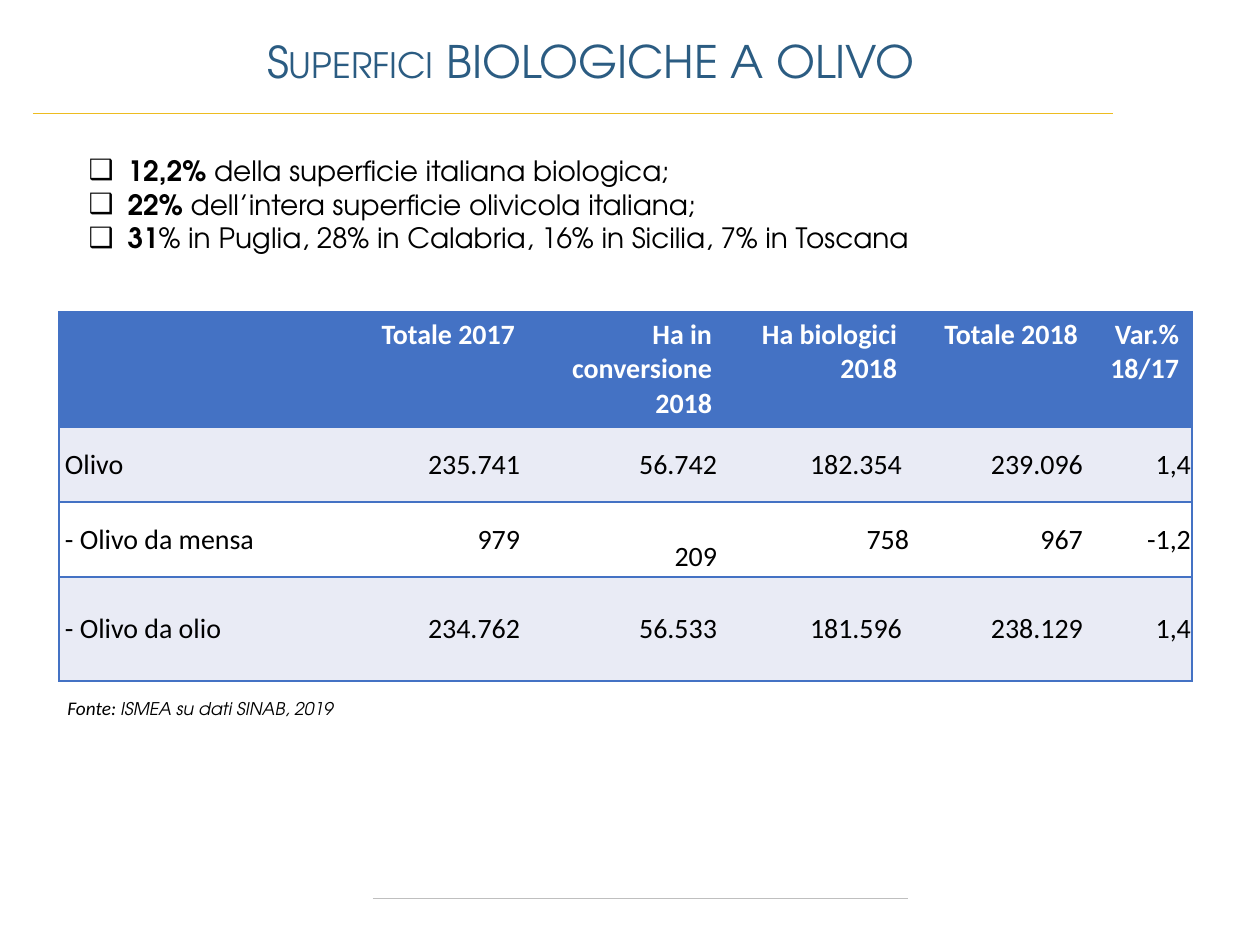
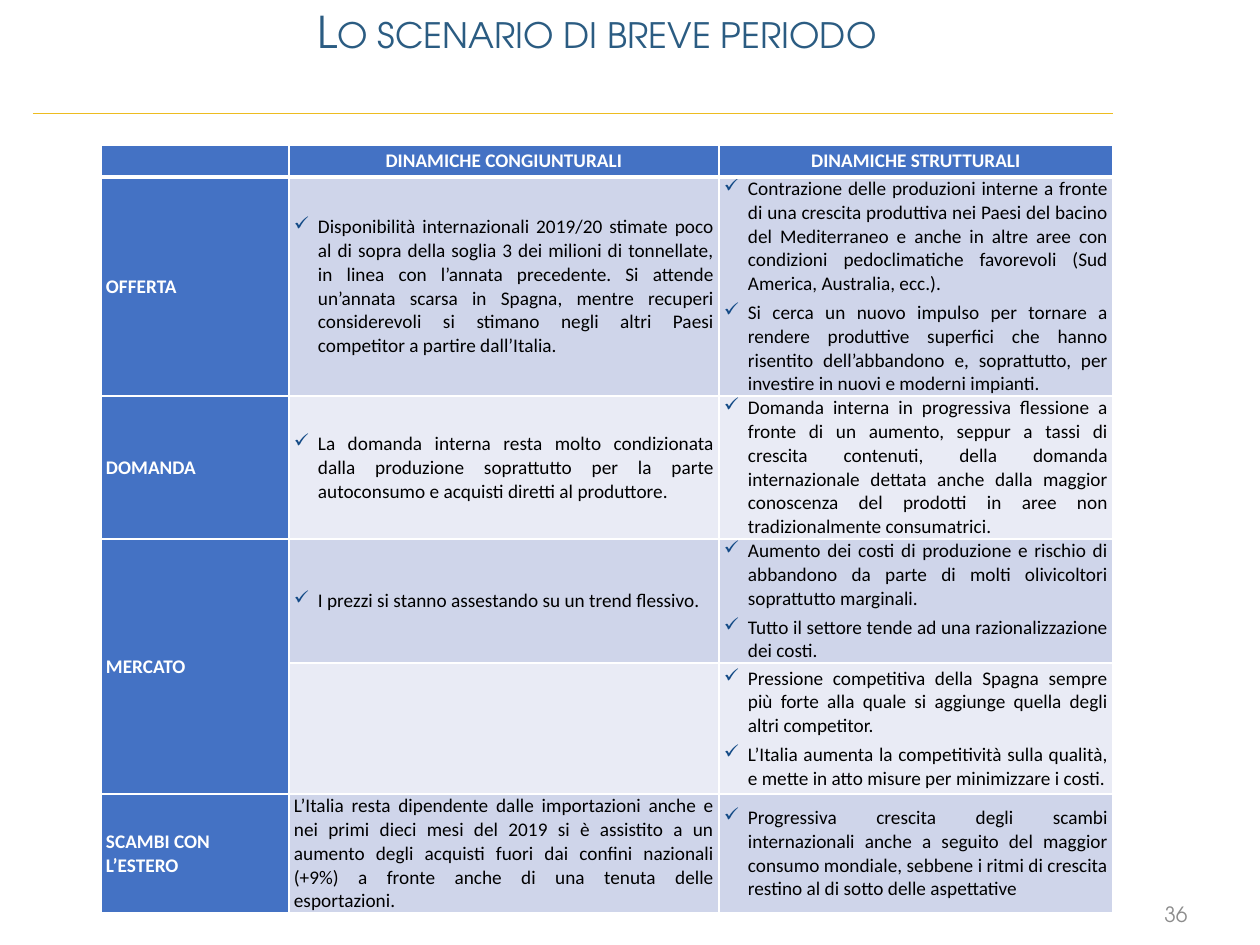
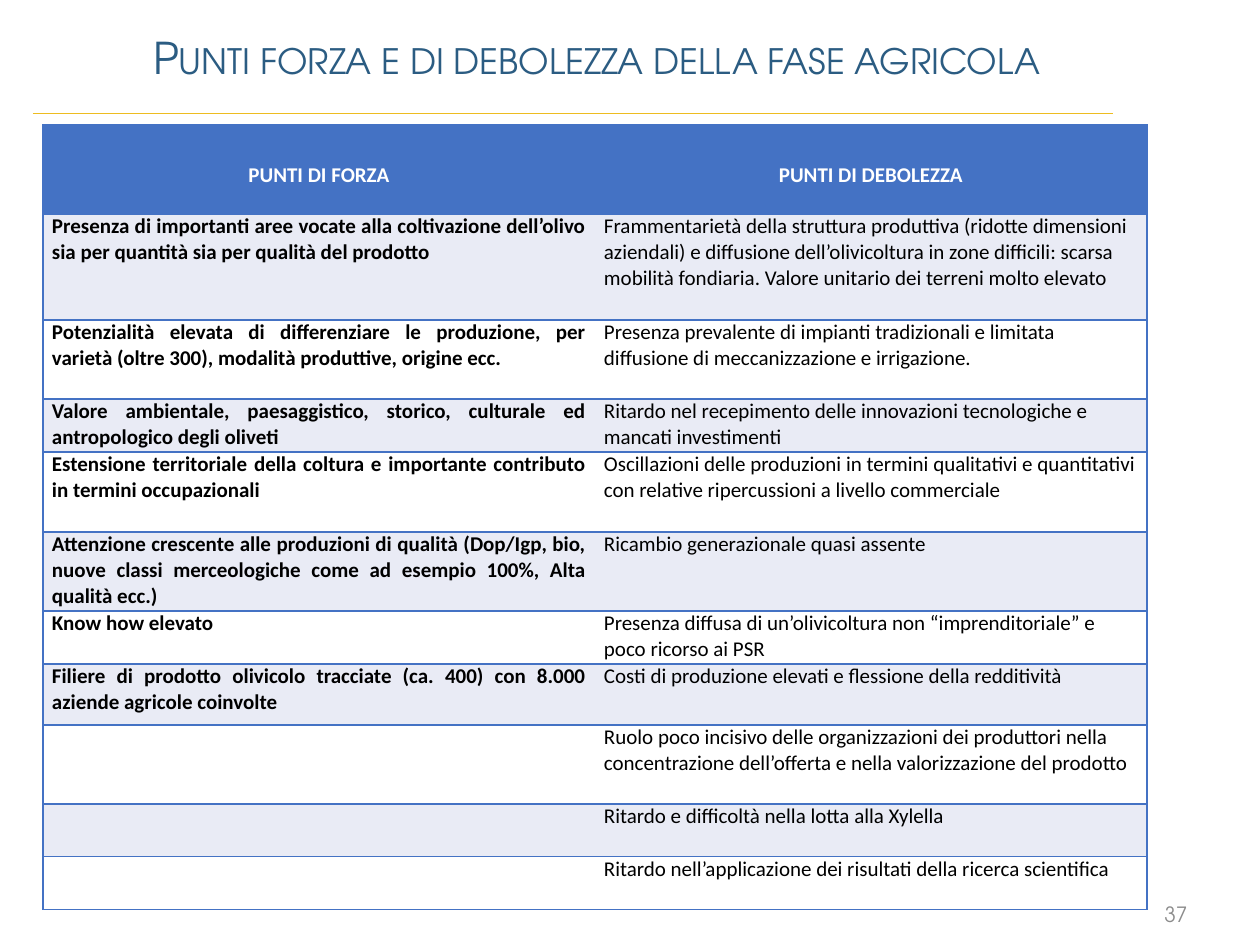
from dataclasses import dataclass, replace

from lxml.etree import SubElement
from pptx import Presentation
from pptx.dml.color import RGBColor
from pptx.enum.shapes import MSO_CONNECTOR
from pptx.enum.text import MSO_ANCHOR, MSO_AUTO_SIZE, PP_ALIGN
from pptx.oxml.ns import qn
from pptx.util import Emu, Pt


@dataclass(frozen=True)
class Theme:
    heading_font: str = "TeX Gyre Adventor"
    table_font: str = "Calibri"
    title: str = "2B5C82"
    rule: str = "EDBC20"
    footer_rule: str = "BFBFBF"
    page: str = "8C8C8C"
    text: str = "000000"
    white: str = "FFFFFF"
    blue: str = "4472C4"
    band: str = "CFD5EA"
    pale: str = "E9EBF5"
    check: str = "134A86"
    title_size: int = 25
    large_title_size: int = 32
    large_size: int = 16
    medium_size: int = 12
    small_size: int = 11
    note_size: int = 10


THEME = Theme()


@dataclass(frozen=True)
class Type:
    size: int
    color: str = THEME.text
    font: str = THEME.table_font
    bold: bool = False
    italic: bool = False
    small_caps: bool = False


@dataclass(frozen=True)
class Bullet:
    symbol: str
    indent: int
    color: str = ""


@dataclass(frozen=True)
class CellStyle:
    type: Type
    fill: str
    margins: tuple = (5, 0, 5, 0)
    align: PP_ALIGN = PP_ALIGN.LEFT
    anchor: MSO_ANCHOR = MSO_ANCHOR.MIDDLE
    bullet: Bullet = None


def px(value):
    return Emu(round(value * 914400 / 126))


class Deck:
    PLAIN_TABLE = "{2D5ABB26-0587-4C30-8999-92F81FD0307C}"

    def __init__(self, theme):
        self.theme = theme
        self.presentation = Presentation()
        self.presentation.slide_width = px(1260)
        self.presentation.slide_height = px(945)
        title_style = self.presentation.slide_master.element.find(
            ".//" + qn("p:titleStyle")
        )
        title_style.find(".//" + qn("a:defRPr")).set("sz", str(theme.title_size * 100))
        self.title_type = Type(
            theme.title_size, theme.title, theme.heading_font, small_caps=True
        )
        self.slide = None

    def start_slide(self, runs, layout=5, line_break=False):
        self.slide = self.presentation.slides.add_slide(
            self.presentation.slide_layouts[layout]
        )
        self.line(373, 908, 898, self.theme.footer_rule, 0.25)
        self.line(33, 1113, 113, self.theme.rule, 0.5)
        title = self.slide.shapes.title
        self.place(title, 49, 26, 1096, 69)
        paragraph = title.text_frame.paragraphs[0]
        paragraph.alignment = PP_ALIGN.CENTER
        paragraph.line_spacing = 0.9
        self.add_runs(paragraph, runs)
        if line_break:
            paragraph.add_line_break()

    def place(self, shape, left, top, width, height):
        shape.left, shape.top = px(left), px(top)
        shape.width, shape.height = px(width), px(height)
        frame = shape.text_frame
        frame.auto_size = MSO_AUTO_SIZE.NONE
        frame.word_wrap = True
        frame.vertical_anchor = MSO_ANCHOR.MIDDLE

    def line(self, left, right, top, color, weight):
        connector = self.slide.shapes.add_connector(
            MSO_CONNECTOR.STRAIGHT, px(left), px(top), px(right), px(top)
        )
        connector.line.color.rgb = RGBColor.from_string(color)
        connector.line.width = Pt(weight)
        SubElement(connector._element.spPr, qn("a:effectLst"))

    def add_runs(self, paragraph, runs):
        for text, style in runs:
            run = paragraph.add_run()
            run.text = text
            font = run.font
            font.name = style.font
            font.size = Pt(style.size)
            font.bold = style.bold
            font.italic = style.italic
            font.color.rgb = RGBColor.from_string(style.color)
            if style.small_caps:
                run._r.get_or_add_rPr().set("cap", "small")

    def add_bullet(self, paragraph, bullet):
        properties = paragraph._p.get_or_add_pPr()
        properties.set("marL", str(px(bullet.indent)))
        properties.set("indent", str(-px(bullet.indent)))
        if bullet.color:
            color = SubElement(properties, qn("a:buClr"))
            SubElement(color, qn("a:srgbClr"), val=bullet.color)
        SubElement(properties, qn("a:buChar"), char=bullet.symbol)

    def bullet_list(self, items, bullet, left, top, width, height):
        body = self.slide.placeholders[1]
        self.place(body, left, top, width, height)
        frame = body.text_frame
        for index, runs in enumerate(items):
            paragraph = frame.add_paragraph() if index else frame.paragraphs[0]
            self.add_bullet(paragraph, bullet)
            paragraph.space_before = Pt(0)
            paragraph.line_spacing = 1.0
            self.add_runs(paragraph, runs)

    def text_box(self, runs, left, top, width, height, align=PP_ALIGN.LEFT, wrap=True):
        box = self.slide.shapes.add_textbox(px(left), px(top), px(width), px(height))
        self.place(box, left, top, width, height)
        box.text_frame.word_wrap = wrap
        paragraph = box.text_frame.paragraphs[0]
        paragraph.alignment = align
        self.add_runs(paragraph, runs)

    def page_number(self, number):
        style = Type(self.theme.medium_size, self.theme.page, self.theme.heading_font)
        self.text_box([(number, style)], 1145, 898, 55, 33, PP_ALIGN.RIGHT)

    def table(self, left, top, columns, rows):
        frame = self.slide.shapes.add_table(
            len(rows), len(columns), px(left), px(top), px(sum(columns)), px(sum(rows))
        )
        table = frame.table
        table._tbl.tblPr.find(qn("a:tableStyleId")).text = self.PLAIN_TABLE
        for column, width in zip(table.columns, columns):
            column.width = px(width)
        for row, height in zip(table.rows, rows):
            row.height = px(height)
        return table

    def cell(self, cell, lines, style, borders):
        (cell.margin_left, cell.margin_top,
         cell.margin_right, cell.margin_bottom) = map(px, style.margins)
        cell.vertical_anchor = style.anchor
        properties = cell._tc.get_or_add_tcPr()
        for side in "LRTB":
            if side in borders:
                color, weight = borders[side]
                border = SubElement(properties, qn("a:ln" + side), w=str(Pt(weight)))
                fill = SubElement(border, qn("a:solidFill"))
                SubElement(fill, qn("a:srgbClr"), val=color)
        cell.fill.solid()
        cell.fill.fore_color.rgb = RGBColor.from_string(style.fill)
        frame = cell.text_frame
        if not lines:
            SubElement(
                frame.paragraphs[0]._p, qn("a:endParaRPr"), sz=str(style.type.size * 100)
            )
        for index, text in enumerate(lines):
            paragraph = frame.add_paragraph() if index else frame.paragraphs[0]
            paragraph.alignment = style.align
            if style.bullet:
                self.add_bullet(paragraph, style.bullet)
                if index:
                    paragraph.space_before = Pt(3)
            self.add_runs(paragraph, [(text, style.type)])

    def outline(self, column, last_column):
        border = (self.theme.blue, 1)
        borders = {"T": border, "B": border}
        if column == 0:
            borders["L"] = border
        if column == last_column:
            borders["R"] = border
        return borders

    def stripe(self, row):
        return self.theme.pale if row % 2 else self.theme.white


def organic_areas(deck):
    theme = deck.theme
    large_title = replace(deck.title_type, size=theme.large_title_size)
    deck.start_slide(
        [("Superfici", deck.title_type), (" biologiche a olivo ", large_title)], layout=1
    )
    plain = Type(theme.large_size, font=theme.heading_font)
    strong = replace(plain, bold=True)
    facts = [
        ("12,2% ", "della superficie italiana biologica;"),
        ("22% ", "dell’intera superficie olivicola italiana;"),
        ("31", "% in Puglia, 28% in Calabria, 16% in Sicilia, 7% in Toscana"),
    ]
    deck.bullet_list(
        [[(share, strong), (text, plain)] for share, text in facts],
        Bullet("❑", 39), 76, 121, 1115, 166,
    )
    deck.text_box(
        [("Fonte: ", Type(theme.small_size, italic=True)),
         ("ISMEA su dati SINAB, 2019",
          Type(theme.note_size, font=theme.heading_font, italic=True))],
        55, 689, 295, 37, wrap=False,
    )
    content = [
        ["", "Totale 2017", "Ha in conversione 2018", "Ha biologici 2018",
         "Totale 2018", "Var.%\n18/17"],
        ["Olivo", "235.741", "56.742", "182.354", "239.096", "1,4"],
        ["- Olivo da mensa", "979", "209", "758", "967", "-1,2"],
        ["- Olivo da olio", "234.762", "56.533", "181.596", "238.129", "1,4"],
    ]
    special_margins = {(2, 2): (1, 35, 8, 0), (2, 3): (1, 1, 1, 0)}
    header = CellStyle(
        Type(theme.large_size, theme.white, bold=True), theme.blue,
        (13, 6, 13, 6), PP_ALIGN.RIGHT, MSO_ANCHOR.TOP,
    )
    table = deck.table(59, 312, [254, 215, 197, 185, 181, 101], [115, 75, 75, 104])
    last = len(content[0]) - 1
    for row, values in enumerate(content):
        label = CellStyle(Type(theme.large_size), deck.stripe(row), (6, 0, 6, 0))
        for column, value in enumerate(values):
            if row == 0:
                style = header
            elif column == 0:
                style = label
            else:
                margins = (1, 1, 1 if column == last else 8, 0)
                margins = special_margins.get((row, column), margins)
                style = replace(label, margins=margins, align=PP_ALIGN.RIGHT)
            deck.cell(
                table.cell(row, column), value.split("\n") if value else [],
                style, deck.outline(column, last),
            )


def short_term_scenario(deck):
    theme = deck.theme
    deck.start_slide([("Lo scenario di breve periodo", deck.title_type)], line_break=True)
    deck.page_number("36")
    content = [
        ("", ["DINAMICHE CONGIUNTURALI"], ["DINAMICHE STRUTTURALI"]),
        ("OFFERTA",
         ["Disponibilità internazionali 2019/20 stimate poco al di sopra della soglia 3 dei milioni di tonnellate, in linea con l’annata precedente. Si attende un’annata scarsa in Spagna, mentre recuperi considerevoli si stimano negli altri Paesi competitor a partire dall’Italia."],
         ["Contrazione delle produzioni interne a fronte di una crescita produttiva nei Paesi del bacino del Mediterraneo e anche in altre aree con condizioni pedoclimatiche favorevoli (Sud America, Australia, ecc.).",
          "Si cerca un nuovo impulso per tornare a rendere produttive superfici che hanno risentito dell’abbandono e, soprattutto, per investire in nuovi e moderni impianti."]),
        ("DOMANDA",
         ["La domanda interna resta molto condizionata dalla produzione soprattutto per la parte autoconsumo e acquisti diretti al produttore."],
         ["Domanda interna in progressiva flessione a fronte di un aumento, seppur a tassi di crescita contenuti, della domanda internazionale dettata anche dalla maggior conoscenza del prodotti in aree non tradizionalmente consumatrici."]),
        ("MERCATO",
         ["I prezzi si stanno assestando su un trend flessivo."],
         ["Aumento dei costi di produzione e rischio di abbandono da parte di molti olivicoltori soprattutto marginali.",
          "Tutto il settore tende ad una razionalizzazione dei costi."]),
        ("", [],
         ["Pressione competitiva della Spagna sempre più forte alla quale si aggiunge quella degli altri competitor.",
          "L’Italia aumenta la competitività sulla qualità, e mette in atto misure per minimizzare i costi."]),
        ("SCAMBI CON L’ESTERO",
         ["L’Italia resta dipendente dalle importazioni anche e nei primi dieci mesi del 2019 si è assistito a un aumento degli acquisti fuori dai confini nazionali (+9%) a fronte anche di una tenuta delle esportazioni."],
         ["Progressiva crescita degli scambi internazionali anche a seguito del maggior consumo mondiale, sebbene i ritmi di crescita restino al di sotto delle aspettative"]),
    ]
    label = CellStyle(Type(theme.small_size, theme.white, bold=True), theme.blue)
    header = replace(label, align=PP_ALIGN.CENTER)
    check = Bullet("✓", 24, theme.check)
    table = deck.table(101, 145, [188, 430, 394], [32, 218, 143, 123, 131, 118])
    table.cell(3, 0).merge(table.cell(4, 0))
    last_row = len(content) - 1
    for row, (topic, current, structural) in enumerate(content):
        body = CellStyle(
            Type(theme.small_size), theme.band if row % 2 else theme.pale,
            align=PP_ALIGN.JUSTIFY, bullet=check,
        )
        borders = {side: (theme.white, 1) for side in "LRTB"}
        if row == 0:
            borders["B"] = (theme.white, 3)
        elif row == 1:
            borders["T"] = (theme.white, 3)
        for column, lines in enumerate([[topic] if topic else [], current, structural]):
            if row == 0:
                style = header
            elif column == 0:
                style = label
            elif row == last_row and column == 1:
                style = replace(body, bullet=None)
            else:
                style = body
            deck.cell(table.cell(row, column), lines, style, borders)


def strengths_and_weaknesses(deck):
    theme = deck.theme
    deck.start_slide([("Punti forza e di debolezza della fase agricola", deck.title_type)])
    deck.page_number("37")
    content = [
        ("PUNTI DI FORZA", "PUNTI DI DEBOLEZZA"),
        ("Presenza di importanti aree vocate alla coltivazione dell’olivo sia per quantità sia per qualità del prodotto",
         "Frammentarietà della struttura produttiva (ridotte dimensioni aziendali) e diffusione dell’olivicoltura in zone difficili: scarsa mobilità fondiaria. Valore unitario dei terreni molto elevato"),
        ("Potenzialità elevata di differenziare le produzione, per varietà (oltre 300), modalità produttive, origine ecc.",
         "Presenza prevalente di impianti tradizionali e limitata diffusione di meccanizzazione e irrigazione."),
        ("Valore ambientale, paesaggistico, storico, culturale ed antropologico degli oliveti",
         "Ritardo nel recepimento delle innovazioni tecnologiche e mancati investimenti"),
        ("Estensione territoriale della coltura e importante contributo in termini occupazionali",
         "Oscillazioni delle produzioni in termini qualitativi e quantitativi con relative ripercussioni a livello commerciale"),
        ("Attenzione crescente alle produzioni di qualità (Dop/Igp, bio, nuove classi merceologiche come ad esempio 100%, Alta qualità ecc.)",
         "Ricambio generazionale quasi assente"),
        ("Know how elevato",
         "Presenza diffusa di un’olivicoltura non “imprenditoriale” e poco ricorso ai PSR"),
        ("Filiere di prodotto olivicolo tracciate (ca. 400) con 8.000 aziende agricole coinvolte",
         "Costi di produzione elevati e flessione della redditività"),
        ("", "Ruolo poco incisivo delle organizzazioni dei produttori nella concentrazione dell’offerta e nella valorizzazione del prodotto"),
        ("", "Ritardo e difficoltà nella lotta alla Xylella"),
        ("", "Ritardo nell’applicazione dei risultati della ricerca scientifica"),
    ]
    header = CellStyle(
        Type(theme.medium_size, theme.white, bold=True), theme.blue,
        (5, 12, 5, 0), PP_ALIGN.CENTER,
    )
    heights = [89, 106, 79, 53, 80, 79, 53, 61, 79, 53, 53]
    table = deck.table(43, 125, [552, 552], heights)
    for row, values in enumerate(content):
        weakness = CellStyle(
            Type(theme.medium_size), deck.stripe(row), (9, 0, 9, 0), anchor=MSO_ANCHOR.TOP
        )
        strength = replace(
            weakness, type=replace(weakness.type, bold=True), align=PP_ALIGN.JUSTIFY
        )
        styles = (strength, weakness) if row else (header, header)
        for column, (value, style) in enumerate(zip(values, styles)):
            deck.cell(
                table.cell(row, column), [value] if value else [],
                style, deck.outline(column, 1),
            )


def main():
    deck = Deck(THEME)
    organic_areas(deck)
    short_term_scenario(deck)
    strengths_and_weaknesses(deck)
    deck.presentation.save("out.pptx")


if __name__ == "__main__":
    main()
